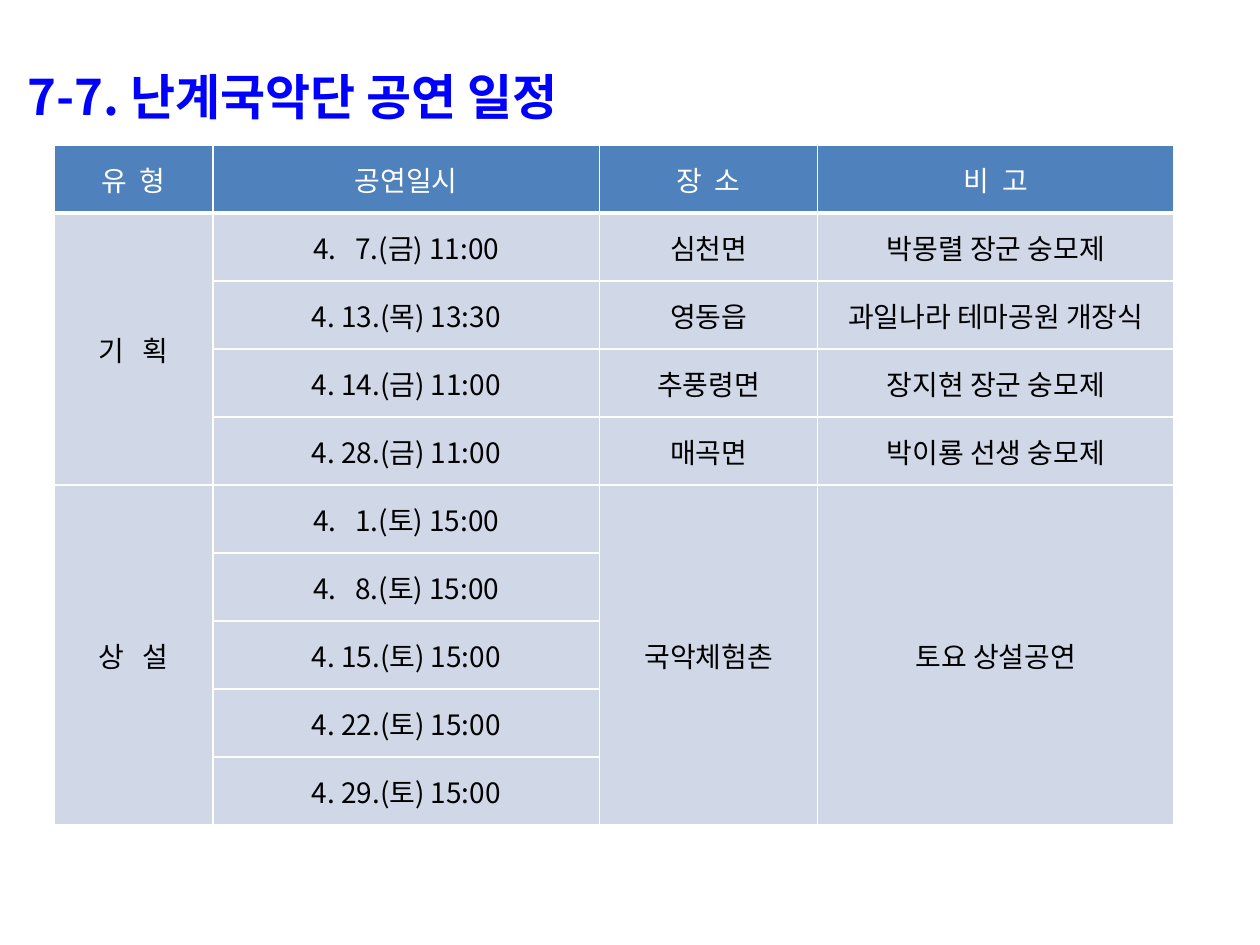
from lxml import etree
from pptx import Presentation
from pptx.dml.color import RGBColor
from pptx.enum.text import MSO_ANCHOR, PP_ALIGN
from pptx.oxml.ns import qn
from pptx.util import Inches, Pt

CENTER = PP_ALIGN.CENTER
MIDDLE = MSO_ANCHOR.MIDDLE

COLORS = {
    "title": "0000FF",
    "header": "4F81BD",
    "body": "D0D8E8",
    "white": "FFFFFF",
    "text": "000000",
}
HEADERS = ["유  형", "공연일시", "장  소", "비  고"]
PLANNED = [
    ("4.   7.(금) 11:00", "심천면", "박몽렬 장군 숭모제"),
    ("4. 13.(목) 13:30", "영동읍", "과일나라 테마공원 개장식"),
    ("4. 14.(금) 11:00", "추풍령면", "장지현 장군 숭모제"),
    ("4. 28.(금) 11:00", "매곡면", "박이룡 선생 숭모제"),
]
REGULAR_DATES = ["4.   1.", "4.   8.", "4. 15.", "4. 22.", "4. 29."]
COLUMN_WIDTHS = [1.26, 3.07, 1.73, 2.83]
ROW_HEIGHT = 0.54


class SlideBuilder:
    font = "Noto Sans CJK KR"

    def __init__(self, slide):
        self.slide = slide

    def style(self, p, size, color, bold=False):
        for r in p.runs:
            r.font.name = self.font
            r.font.size = Pt(size)
            r.font.bold = bold
            r.font.color.rgb = RGBColor.from_string(COLORS[color])
            ea = etree.SubElement(r.font._element, qn("a:ea"))
            ea.set("typeface", self.font)

    def title(self, text, left, top, width, height):
        sp = self.slide.shapes.add_textbox(*map(Inches, (left, top, width, height)))
        tf = sp.text_frame
        tf.word_wrap = True
        tf.text = text
        p = tf.paragraphs[0]
        p.line_spacing = 1.4
        pPr = p._p.get_or_add_pPr()
        pPr.set("marL", str(Inches(0.58)))
        pPr.set("indent", str(Inches(-0.58)))
        self.style(p, 28, "title", bold=True)

    def borders(self, cell, **widths):
        """Draw white cell edges; widths maps L, R, T, B to points."""
        tcPr = cell._tc.get_or_add_tcPr()
        for i, (side, width) in enumerate(widths.items()):
            ln = etree.Element(qn(f"a:ln{side}"), w=str(Pt(width)))
            fill = etree.SubElement(ln, qn("a:solidFill"))
            etree.SubElement(fill, qn("a:srgbClr"), val=COLORS["white"])
            tcPr.insert(i, ln)

    def table(self, rows, merges, left, top):
        frame = self.slide.shapes.add_table(
            len(rows), len(COLUMN_WIDTHS), Inches(left), Inches(top),
            Inches(sum(COLUMN_WIDTHS)), Inches(ROW_HEIGHT * len(rows)))
        table = frame.table
        for column, width in zip(table.columns, COLUMN_WIDTHS):
            column.width = Inches(width)
        for i, row in enumerate(rows):
            table.rows[i].height = Inches(ROW_HEIGHT)
            for j, text in enumerate(row):
                cell = table.cell(i, j)
                cell.text = text
                cell.vertical_anchor = MIDDLE
                cell.fill.solid()
                cell.fill.fore_color.rgb = RGBColor.from_string(
                    COLORS["body" if i else "header"])
                p = cell.text_frame.paragraphs[0]
                p.alignment = CENTER
                self.style(p, 16, "text" if i else "white")
                self.borders(cell, L=1, R=1, T=3 if i == 1 else 1, B=1 if i else 3)
        for first, last, column in merges:
            table.cell(first, column).merge(table.cell(last, column))


def main():
    prs = Presentation()
    prs.slide_width, prs.slide_height = Inches(10), Inches(7.5)
    s = SlideBuilder(prs.slides.add_slide(prs.slide_layouts[6]))

    s.title("7-7. 난계국악단 공연 일정", 0.12, 0.29, 9.61, 2.81)

    planned = [["", *row] for row in PLANNED]
    planned[0][0] = "기   획"
    regular = [["", f"{date}(토) 15:00", "", ""] for date in REGULAR_DATES]
    regular[0][0] = "상   설"
    regular[0][2:] = ["국악체험촌", "토요 상설공연"]
    merges = [(1, 4, 0)] + [(5, 9, column) for column in (0, 2, 3)]
    s.table([HEADERS, *planned, *regular], merges, 0.43, 1.15)

    prs.save("out.pptx")


if __name__ == "__main__":
    main()
